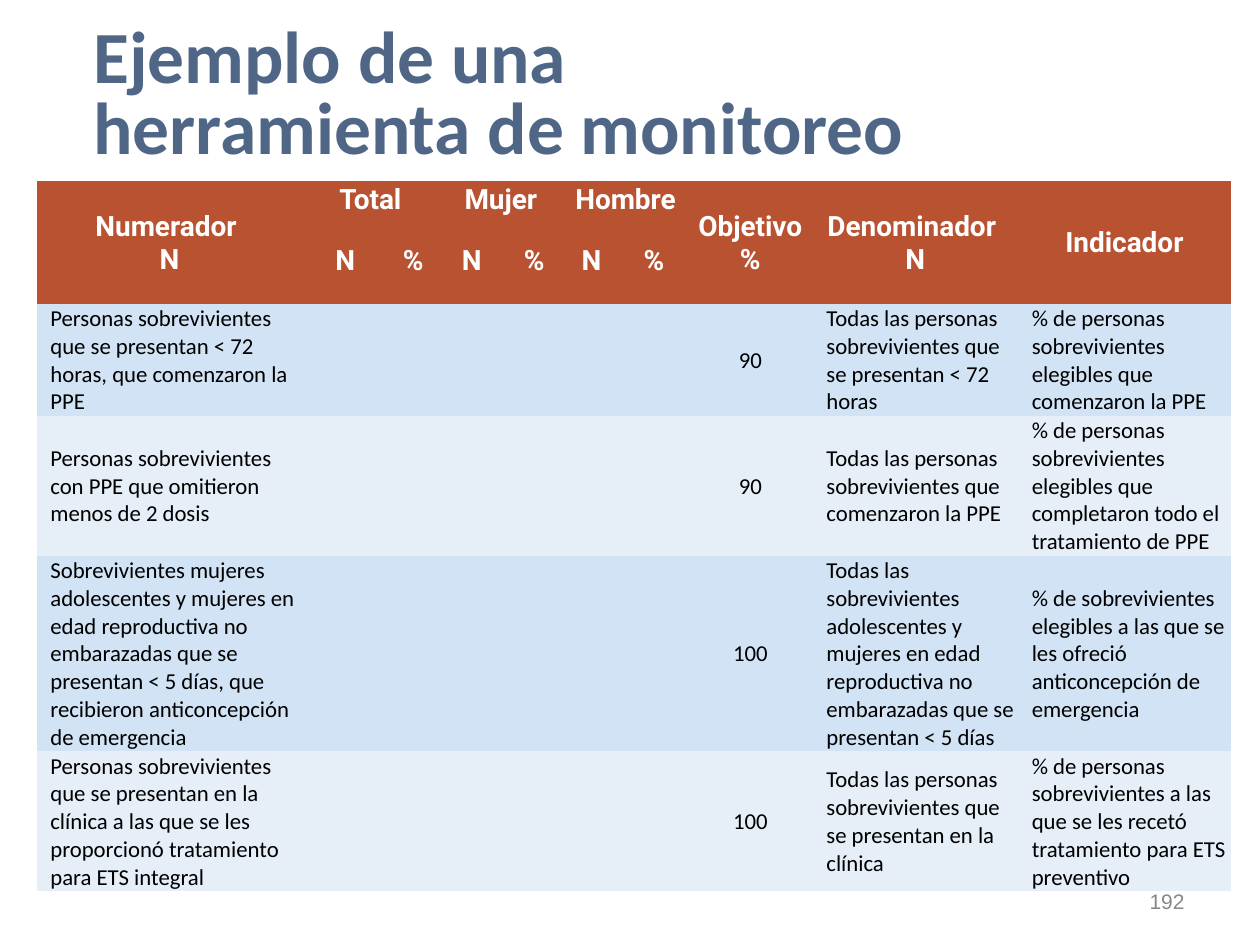
import pptx
import pptx.util
import pptx.dml.color
import pptx.enum.text

Inches, Pt = pptx.util.Inches, pptx.util.Pt
ALIGN = pptx.enum.text.PP_ALIGN
MIDDLE = pptx.enum.text.MSO_ANCHOR.MIDDLE
COLORS = {"title": "506687", "header": "B85231", "band_a": "D1E3F4", "band_b": "E6EFF8",
          "white": "FFFFFF", "text": "000000", "number": "888888"}
FORMATS = {
    "title": {"name": "Calibri", "size": Pt(42), "bold": True},
    "header": {"name": "Roboto", "size": Pt(16), "bold": True},
    "body": {"name": "Calibri", "size": Pt(13), "bold": False},
    "number": {"name": "Arial", "size": Pt(12), "bold": False},
}
NO_STYLE = "{2D5ABB26-0587-4C30-8999-92F81FD0307C}"


def rgb(name):
    return pptx.dml.color.RGBColor.from_string(COLORS[name])


def write(tf, text, fmt, color, align, indent=0):
    tf.text = text
    for p in tf.paragraphs:
        p.alignment = align
        if indent:
            p._p.get_or_add_pPr().set("marL", str(Inches(indent)))
        for r in p.runs:
            for key, value in FORMATS[fmt].items():
                setattr(r.font, key, value)
            r.font.color.rgb = rgb(color)


prs = pptx.Presentation()
prs.slide_width, prs.slide_height = Inches(10), Inches(7.5)
s = prs.slides.add_slide(prs.slide_layouts[5])

# Title
sp = s.shapes.title
sp.left, sp.top, sp.width, sp.height = [Inches(v) for v in (0.64, 0.42, 7.03, 0.71)]
tf = sp.text_frame
tf.word_wrap = True
tf.auto_size = pptx.enum.text.MSO_AUTO_SIZE.NONE
tf.vertical_anchor = MIDDLE
write(tf, "Ejemplo de una herramienta de monitoreo", "title", "title", ALIGN.LEFT)
tf.paragraphs[0].line_spacing = 0.8

# Table grid
cols = [2.11, 0.68, 0.4, 0.53, 0.46, 0.45, 0.54, 0.99, 1.63, 1.69]
rows = [0.29, 0.68, 0.81, 0.82, 1.18, 1]
frame = s.shapes.add_table(len(rows), len(cols), Inches(0.29), Inches(1.44),
                           Inches(sum(cols)), Inches(sum(rows)))
tbl = frame.table
tbl._tbl.tblPr[0].text = NO_STYLE
for column, width in zip(tbl.columns, cols):
    column.width = Inches(width)
for row, height in zip(tbl.rows, rows):
    row.height = Inches(height)

# Cell fills and margins
cell_format = {"margin_left": Inches(0.01), "margin_right": Inches(0.01),
               "margin_top": Inches(0.01), "margin_bottom": 0, "vertical_anchor": MIDDLE}
for i in range(len(rows)):
    fill = "header" if i < 2 else ("band_a", "band_b")[i % 2]
    for j in range(len(cols)):
        cell = tbl.cell(i, j)
        cell.fill.solid()
        cell.fill.fore_color.rgb = rgb(fill)
        for key, value in cell_format.items():
            setattr(cell, key, value)

# Header: columns two rows tall, and groups split into N and %
headings = {0: "Numerador \nN", 7: "Objetivo %", 8: "Denominador \nN", 9: "Indicador"}
groups = {1: "Total", 3: "Mujer", 5: "Hombre"}
labels = {(0, j): text for j, text in (headings | groups).items()}
for j in headings:
    tbl.cell(0, j).merge(tbl.cell(1, j))
for j in groups:
    tbl.cell(0, j).merge(tbl.cell(0, j + 1))
    labels[1, j], labels[1, j + 1] = "N", "%"
for (i, j), text in labels.items():
    write(tbl.cell(i, j).text_frame, text, "header", "white", ALIGN.CENTER)

# Body: numerator, target, denominator, indicator
body = [
    ("Personas sobrevivientes que se presentan < 72 horas, que comenzaron la PPE",
     "90",
     "Todas las personas sobrevivientes que se presentan < 72 horas",
     "% de personas sobrevivientes elegibles que comenzaron la PPE"),
    ("Personas sobrevivientes con PPE que omitieron menos de 2 dosis",
     "90",
     "Todas las personas sobrevivientes que comenzaron la PPE",
     "% de personas sobrevivientes elegibles que completaron todo el tratamiento de PPE"),
    ("Sobrevivientes mujeres adolescentes y mujeres en edad reproductiva no embarazadas "
     "que se presentan < 5 días, que recibieron anticoncepción de emergencia",
     "100",
     "Todas las sobrevivientes adolescentes y mujeres en edad reproductiva no embarazadas "
     "que se presentan < 5 días",
     "% de sobrevivientes elegibles a las que se les ofreció anticoncepción de emergencia"),
    ("Personas sobrevivientes que se presentan en la clínica a las que se les proporcionó "
     "tratamiento para ETS integral",
     "100",
     "Todas las personas sobrevivientes que se presentan en la clínica",
     "% de personas sobrevivientes a las que se les recetó tratamiento para ETS preventivo"),
]
for i, texts in enumerate(body, start=2):
    for j, text in zip(headings, texts):
        target = j == 7
        write(tbl.cell(i, j).text_frame, text, "body", "text",
              ALIGN.CENTER if target else ALIGN.LEFT, 0 if target else 0.1)

# Slide number
sp = s.shapes.add_textbox(Inches(7.17), Inches(6.95), Inches(2.33), Inches(0.4))
tf = sp.text_frame
tf.word_wrap = True
tf.vertical_anchor = MIDDLE
write(tf, "192", "number", "number", ALIGN.RIGHT)

prs.save("out.pptx")
